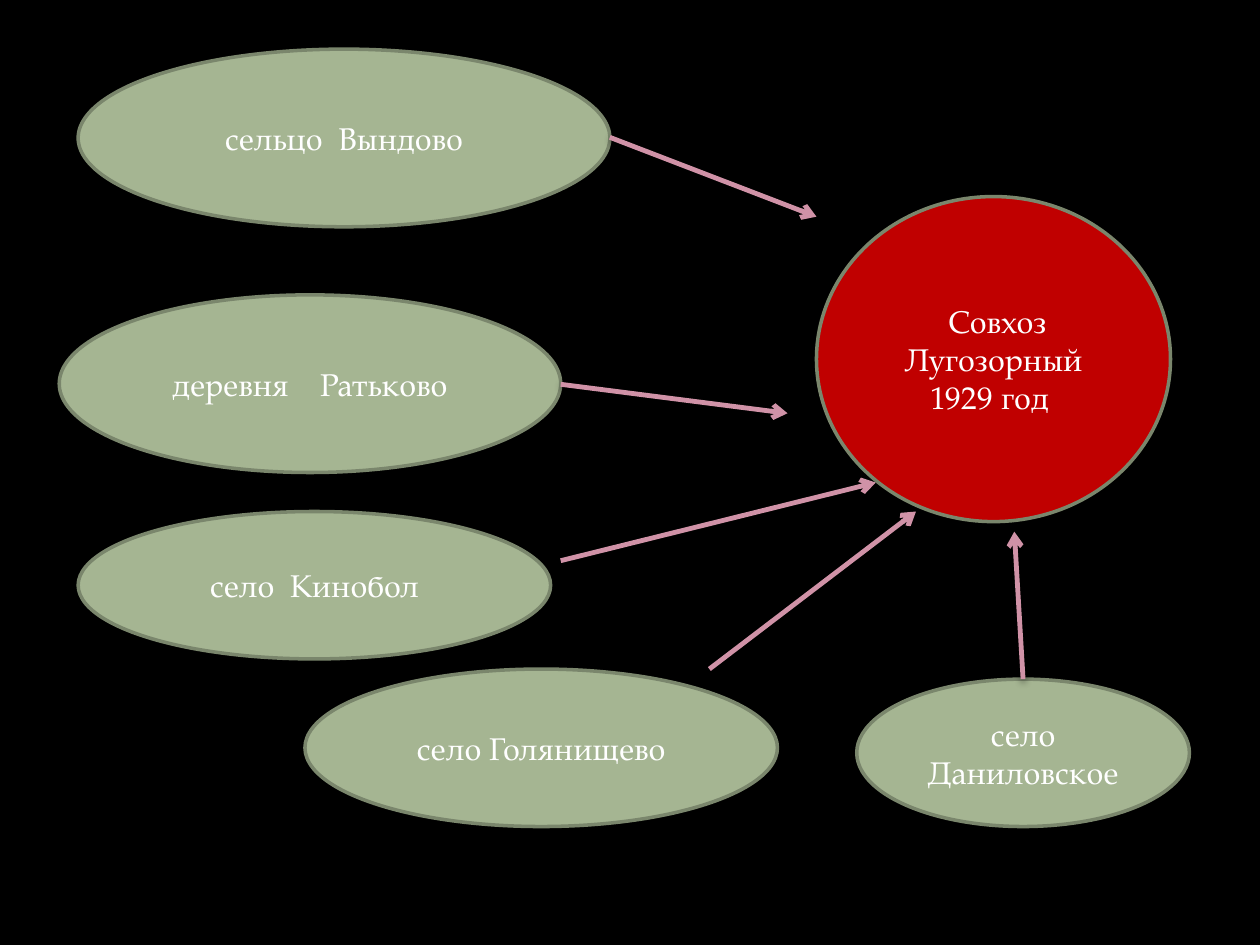
"""Builds a slide showing five villages merging into one state farm."""
from lxml import etree
from pptx import Presentation
from pptx.dml.color import RGBColor
from pptx.enum import shapes, text
from pptx.oxml import parse_xml
from pptx.oxml.ns import nsdecls, qn
from pptx.util import Inches, Pt

FARM_RED, VILLAGE_GREEN = "C00000", "A5B592"
OUTLINE, ARROW, WHITE, BLACK = "7A866C", "D092A7", "FFFFFF", "000000"
SHADOW = (
    f'<a:effectLst {nsdecls("a")}>'
    '<a:outerShdw blurRad="50800" dist="20320" dir="5400000" rotWithShape="0">'
    f'<a:srgbClr val="{BLACK}"><a:alpha val="42000"/></a:srgbClr>'
    '</a:outerShdw></a:effectLst>'
)


def paint(color_format, color):
    color_format.rgb = RGBColor.from_string(color)


deck = Presentation()
deck.slide_width, deck.slide_height = Inches(10), Inches(7.5)
slide = deck.slides.add_slide(deck.slide_layouts[6])
slide.background.fill.solid()
paint(slide.background.fill.fore_color, BLACK)

places = [
    (" Совхоз Лугозорный 1929 год ", FARM_RED, 6.48, 1.56, 2.81, 2.58),
    ("сельцо  Вындово", VILLAGE_GREEN, 0.62, 0.39, 4.22, 1.41),
    ("деревня    Ратьково", VILLAGE_GREEN, 0.47, 2.34, 3.98, 1.41),
    ("село  Кинобол", VILLAGE_GREEN, 0.62, 4.06, 3.75, 1.17),
    ("село Голянищево", VILLAGE_GREEN, 2.42, 5.31, 3.75, 1.25),
    ("село Даниловское", VILLAGE_GREEN, 6.8, 5.39, 2.64, 1.17),
]
for name, color, *box in places:
    place = slide.shapes.add_shape(shapes.MSO_SHAPE.OVAL, *map(Inches, box))
    place.shadow.inherit = False
    place.fill.solid()
    paint(place.fill.fore_color, color)
    paint(place.line.color, OUTLINE)
    place.line.width = Pt(2)
    frame = place.text_frame
    frame.word_wrap = True
    frame.vertical_anchor = text.MSO_ANCHOR.MIDDLE
    label = frame.paragraphs[0]
    label.text = name
    label.alignment = text.PP_ALIGN.CENTER
    label.font.size = Pt(18)
    label.font.name = "TeX Gyre Pagella"
    paint(label.font.color, WHITE)

routes = [
    (4.84, 1.09, 6.48, 1.72),
    (4.45, 3.05, 6.25, 3.28),
    (4.45, 4.45, 6.95, 3.83),
    (5.63, 5.31, 7.27, 4.06),
    (8.12, 5.39, 8.05, 4.22),
]
for ends in routes:
    route = slide.shapes.add_connector(shapes.MSO_CONNECTOR.STRAIGHT, *map(Inches, ends))
    paint(route.line.color, ARROW)
    route.line.width = Pt(2.75)
    etree.SubElement(route.line._get_or_add_ln(), qn("a:tailEnd"), type="arrow")
    route._element.spPr.append(parse_xml(SHADOW))

deck.save("out.pptx")
